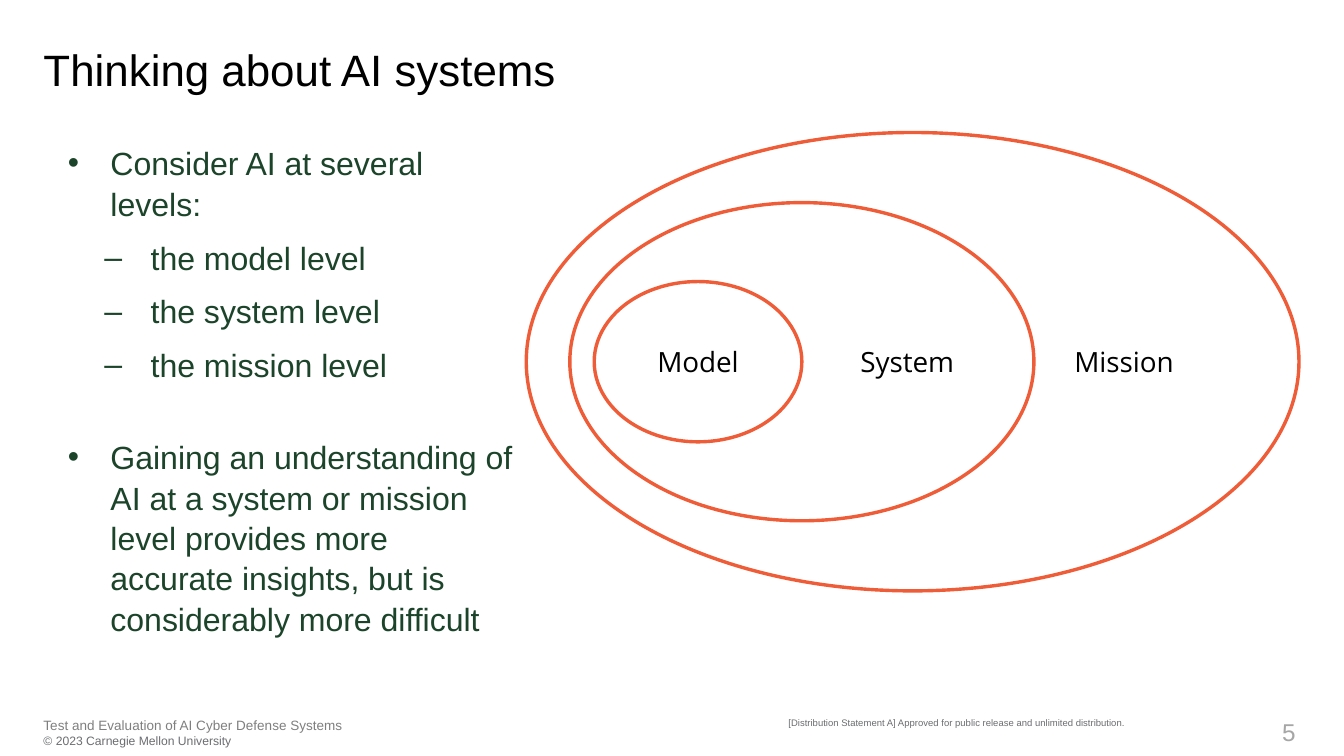
from lxml import etree
from pptx import Presentation
from pptx.dml.color import RGBColor
from pptx.enum.shapes import MSO_SHAPE
from pptx.enum.text import MSO_ANCHOR, PP_ALIGN
from pptx.oxml.ns import qn
from pptx.util import Cm, Pt

OVAL = MSO_SHAPE.OVAL
MIDDLE = MSO_ANCHOR.MIDDLE
LEFT, CENTER, RIGHT = PP_ALIGN.LEFT, PP_ALIGN.CENTER, PP_ALIGN.RIGHT

BLACK = RGBColor(0x00, 0x00, 0x00)
WHITE = RGBColor(0xFF, 0xFF, 0xFF)
GREEN = RGBColor(0x1C, 0x44, 0x2A)
ORANGE = RGBColor(0xEE, 0x5C, 0x38)
GREY = RGBColor(0x7F, 0x7F, 0x7F)
DARK_GREY = RGBColor(0x6C, 0x6D, 0x71)
LIGHT_GREY = RGBColor(0xA6, 0xA6, 0xA6)

# Text, level, space before in points
BULLETS = [
    ("Consider AI at several levels:", 0, 0),
    ("the model level", 1, 8),
    ("the system level", 1, 8),
    ("the mission level", 1, 8),
    ("Gaining an understanding of AI at a system or mission level provides "
     "more accurate insights, but is considerably more difficult", 0, 30.5),
]
# Bullet character, text indent and hanging indent in cm, by level
LEVELS = [("•", 0.89, 0.89), ("–", 1.73, 0.97)]

# Label, left offset, width, height in cm, label alignment; outermost first
RINGS = [
    ("Mission", 0, 16.15, 9.58, RIGHT),
    ("System", 0.91, 9.7, 6.65, RIGHT),
    ("Model", 1.42, 4.34, 3.35, CENTER),
]


def add_run(p, text, size, color, font="Arial"):
    r = p.add_run()
    r.text = text
    r.font.size = Pt(size)
    r.font.name = font
    r.font.color.rgb = color


def add_box(s, box, margins=True):
    """Add a wrapping text box at a (left, top, width, height) in cm."""
    tf = s.shapes.add_textbox(*map(Cm, box)).text_frame
    tf.word_wrap = True
    if not margins:
        tf.margin_left = tf.margin_top = tf.margin_right = tf.margin_bottom = 0
    return tf


def add_title(s, box):
    p = add_box(s, box, margins=False).paragraphs[0]
    p.line_spacing = 1.1
    add_run(p, "Thinking about AI systems", 26, BLACK)


def set_bullet(p, level):
    char, indent, hanging = LEVELS[level]
    pPr = p._p.get_or_add_pPr()
    pPr.set("marL", str(Cm(indent)))
    pPr.set("indent", str(-Cm(hanging)))
    etree.SubElement(pPr, qn("a:buFont")).set("typeface", "Arial")
    etree.SubElement(pPr, qn("a:buChar")).set("char", char)


def add_bullets(s, box):
    tf = add_box(s, box)
    for i, (text, level, before) in enumerate(BULLETS):
        p = tf.add_paragraph() if i else tf.paragraphs[0]
        p.level = level
        set_bullet(p, level)
        p.line_spacing = 1.05
        if before:
            p.space_before = Pt(before)
        add_run(p, text, 19, GREEN)


def add_rings(s, box):
    """Draw the nested ellipses, all centred on the box's middle height."""
    left, top, _, box_height = box
    for label, offset, width, height, align in RINGS:
        ring_top = top + (box_height - height) / 2
        sp = s.shapes.add_shape(OVAL, Cm(left + offset), Cm(ring_top),
                                Cm(width), Cm(height))
        sp.shadow.inherit = False
        sp.fill.solid()
        sp.fill.fore_color.rgb = WHITE
        sp.line.color.rgb = ORANGE
        sp.line.width = Pt(2)
        tf = sp.text_frame
        tf.word_wrap = True
        tf.vertical_anchor = MIDDLE
        p = tf.paragraphs[0]
        p.alignment = align
        add_run(p, label, 16.5, BLACK, "Open Sans")


def add_footer(s, box):
    left, top, width, height = box
    p = add_box(s, (left, top, 11.43, height), margins=False).paragraphs[0]
    add_run(p, "Test and Evaluation of AI Cyber Defense Systems", 8, GREY)
    p.add_line_break()
    add_run(p, "© 2023 Carnegie Mellon University", 7.2, DARK_GREY)

    p = add_box(s, (left + 15.57, top, 8.36, height), margins=False).paragraphs[0]
    add_run(p, "[Distribution Statement A] Approved for public release and "
            "unlimited distribution.", 5.6, DARK_GREY)

    number_width = 1.7
    p = add_box(s, (left + width - number_width, top, number_width, height),
                margins=False).paragraphs[0]
    p.alignment = RIGHT
    add_run(p, "5", 14.4, LIGHT_GREY)


def main():
    prs = Presentation()
    prs.slide_width, prs.slide_height = Cm(28.09), Cm(15.8)
    s = prs.slides.add_slide(prs.slide_layouts[6])
    add_footer(s, (0.91, 14.99, 26.17, 0.65))
    add_title(s, (0.91, 0.79, 23.93, 2.11))
    add_bullets(s, (1.17, 2.84, 9.83, 11.25))
    add_rings(s, (11, 2.77, 16.15, 9.58))
    prs.save("out.pptx")


if __name__ == "__main__":
    main()
